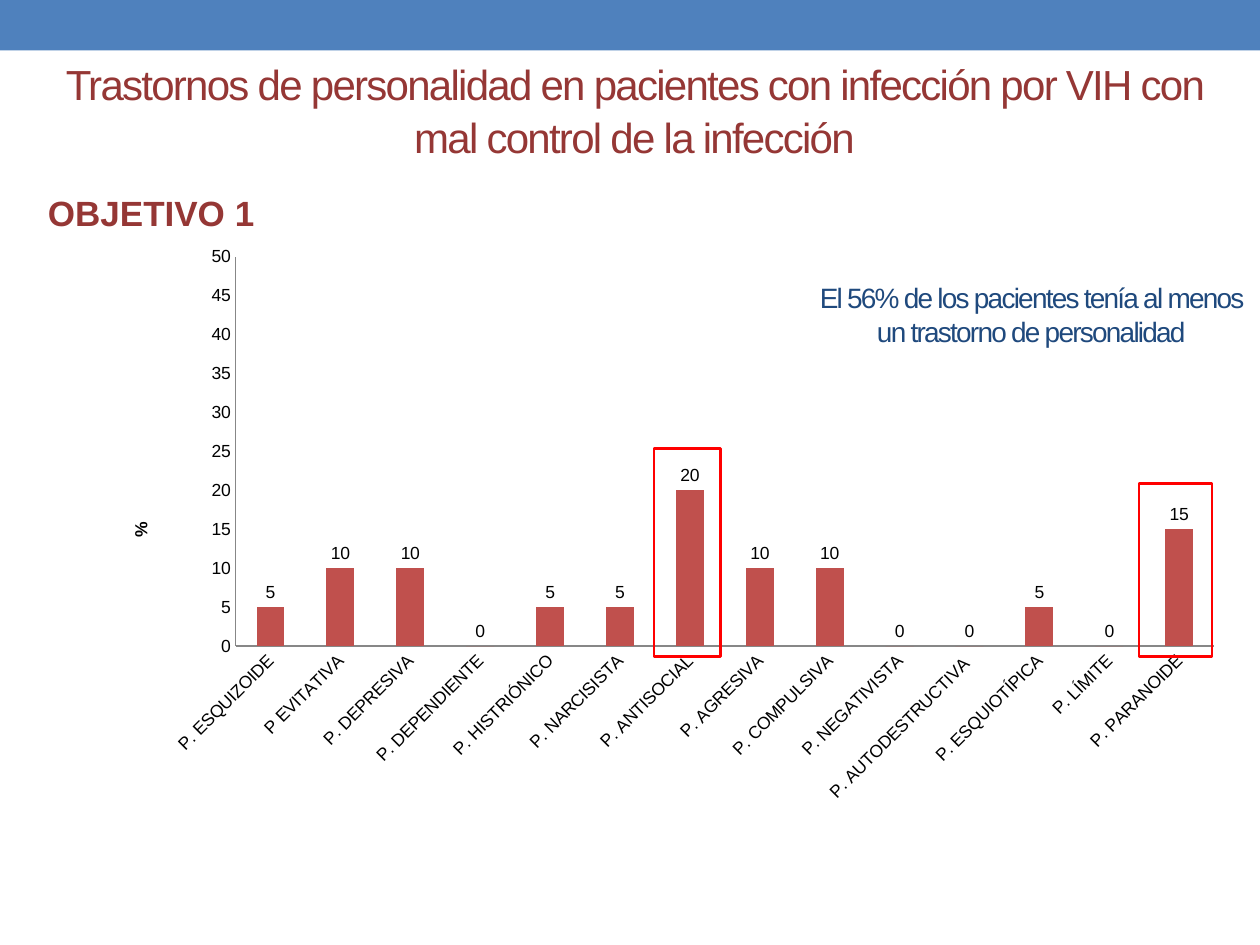
import pptx
import pptx.chart.data
import pptx.dml.color
import pptx.enum.chart
import pptx.enum.shapes
import pptx.enum.text
import pptx.oxml
import pptx.oxml.ns
import pptx.util

Inches, Pt = pptx.util.Inches, pptx.util.Pt
qn = pptx.oxml.ns.qn

TITLE = "Trastornos de personalidad en pacientes con infección por VIH con mal control de la infección"
OBJECTIVE = "OBJETIVO 1"
FINDING = "El 56% de los pacientes tenía al menos un trastorno de personalidad"
AXIS_TITLE = "%"
DISORDERS = [
    ("P. ESQUIZOIDE", 5), ("P EVITATIVA", 10), ("P. DEPRESIVA", 10),
    ("P. DEPENDIENTE", 0), ("P. HISTRIÓNICO", 5), ("P. NARCISISTA", 5),
    ("P. ANTISOCIAL", 20), ("P. AGRESIVA", 10), ("P. COMPULSIVA", 10),
    ("P. NEGATIVISTA", 0), ("P. AUTODESTRUCTIVA ", 0), ("P. ESQUIOTÍPICA", 5),
    ("P. LÍMITE", 0), ("P. PARANOIDE", 15),
]

BANNER = (0, 0, 10, 0.4)
TITLE_BOX = (0.2, 0.24, 9.67, 1.25)
OBJECTIVE_BOX = (0.2, 1.47, 2.05, 0.44)
FINDING_BOX = (6.34, 1.87, 3.69, 1.25)
CHART_BOX = (0.24, 1.55, 9.53, 5.04)
HIGHLIGHTS = [(9.04, 3.84, 0.58, 1.37), (5.19, 3.56, 0.53, 1.65)]
PLOT_LAYOUT = {"x": 0.171, "y": 0.097, "w": 0.815, "h": 0.613}
AXIS_TITLE_LAYOUT = {"x": 0.08, "y": 0.51}

THEME = {
    "font": "Arial",
    "banner": "4F81BD", "heading": "953735", "finding": "1F497D",
    "bar": "C0504D", "highlight": "FF0000", "axis": "878787", "chart_text": "000000",
    "title_size": 24, "objective_size": 20, "finding_size": 16, "chart_size": 10,
}


def color(name):
    return pptx.dml.color.RGBColor.from_string(THEME[name])


def inches(box):
    return [Inches(length) for length in box]


def style_font(font, size, color_name, bold=False):
    font.name = THEME["font"]
    font.size = Pt(THEME[size])
    font.bold = bold
    font.color.rgb = color(color_name)


def write_text(shape, text, size, color_name, bold=False, centered=False):
    """Fill a shape with one paragraph; centred text is also tightened by a point."""
    frame = shape.text_frame
    frame.text = text
    frame.word_wrap = True
    frame.auto_size = pptx.enum.text.MSO_AUTO_SIZE.NONE
    paragraph = frame.paragraphs[0]
    style_font(paragraph.font, size, color_name, bold)
    if centered:
        frame.vertical_anchor = pptx.enum.text.MSO_ANCHOR.MIDDLE
        paragraph.alignment = pptx.enum.text.PP_ALIGN.CENTER
        paragraph.runs[0].font._element.set("spc", "-100")
    return frame


def add_rectangle(slide, box):
    shape = slide.shapes.add_shape(pptx.enum.shapes.MSO_SHAPE.RECTANGLE, *inches(box))
    shape.shadow.inherit = False
    return shape


def manual_layout(fractions, inner=False):
    target = '<c:layoutTarget val="inner"/>' if inner else ""
    modes = "".join(f'<c:{key}Mode val="edge"/>' for key in "xy")
    values = "".join(f'<c:{key} val="{value}"/>' for key, value in fractions.items())
    return pptx.oxml.parse_xml(
        f'<c:layout {pptx.oxml.ns.nsdecls("c")}><c:manualLayout>'
        f"{target}{modes}{values}</c:manualLayout></c:layout>"
    )


def place(element, layout, index):
    for old in element.findall(qn("c:layout")):
        element.remove(old)
    element.insert(index, layout)


def add_disorder_chart(slide):
    data = pptx.chart.data.CategoryChartData()
    data.categories = [name for name, _ in DISORDERS]
    data.add_series("Series 1", [value for _, value in DISORDERS])
    chart = slide.shapes.add_chart(
        pptx.enum.chart.XL_CHART_TYPE.COLUMN_CLUSTERED, *inches(CHART_BOX), data
    ).chart
    chart.has_legend = False
    chart.has_title = False
    style_font(chart.font, "chart_size", "chart_text")

    plot = chart.plots[0]
    plot.gap_width = 150
    plot.vary_by_categories = False
    fill = plot.series[0].format.fill
    fill.solid()
    fill.fore_color.rgb = color("bar")
    plot.has_data_labels = True
    plot.data_labels.show_value = True
    plot.data_labels.position = pptx.enum.chart.XL_LABEL_POSITION.OUTSIDE_END

    for axis in (chart.category_axis, chart.value_axis):
        axis.has_major_gridlines = False
        axis.major_tick_mark = pptx.enum.chart.XL_TICK_MARK.NONE
        axis.minor_tick_mark = pptx.enum.chart.XL_TICK_MARK.NONE
        axis.format.line.color.rgb = color("axis")
        axis.format.line.width = Pt(0.75)
        style_font(axis.tick_labels.font, "chart_size", "chart_text")
    category_text = chart.category_axis._element.find(qn("c:txPr"))
    category_text.find(qn("a:bodyPr")).set("rot", "-2700000")

    value_axis = chart.value_axis
    value_axis.minimum_scale, value_axis.maximum_scale = 0, 50
    value_axis.major_unit = 5
    title = value_axis.axis_title
    title.text_frame.text = AXIS_TITLE
    style_font(title.text_frame.paragraphs[0].font, "chart_size", "chart_text", bold=True)
    title._element.find(".//" + qn("a:bodyPr")).set("rot", "-5400000")
    place(title._element, manual_layout(AXIS_TITLE_LAYOUT), 1)
    plot_area = chart._chartSpace.find(".//" + qn("c:plotArea"))
    place(plot_area, manual_layout(PLOT_LAYOUT, inner=True), 0)


def main():
    presentation = pptx.Presentation()
    presentation.slide_width, presentation.slide_height = Inches(10), Inches(7.5)
    slide = presentation.slides.add_slide(presentation.slide_layouts[5])

    banner = add_rectangle(slide, BANNER)
    banner.fill.solid()
    banner.fill.fore_color.rgb = color("banner")
    banner.line.fill.background()

    add_disorder_chart(slide)
    for box in HIGHLIGHTS:
        frame = add_rectangle(slide, box)
        frame.fill.background()
        frame.line.color.rgb = color("highlight")
        frame.line.width = Pt(1.5)

    objective = slide.shapes.add_textbox(*inches(OBJECTIVE_BOX))
    write_text(objective, OBJECTIVE, "objective_size", "heading", bold=True).margin_left = Inches(0.18)

    title = slide.shapes.title
    title.left, title.top, title.width, title.height = inches(TITLE_BOX)
    title_frame = write_text(title, TITLE, "title_size", "heading", centered=True)
    title_frame.paragraphs[0].line_spacing = 1.05

    finding = slide.shapes.add_textbox(*inches(FINDING_BOX))
    write_text(finding, FINDING, "finding_size", "finding", centered=True)

    presentation.save("out.pptx")


if __name__ == "__main__":
    main()
